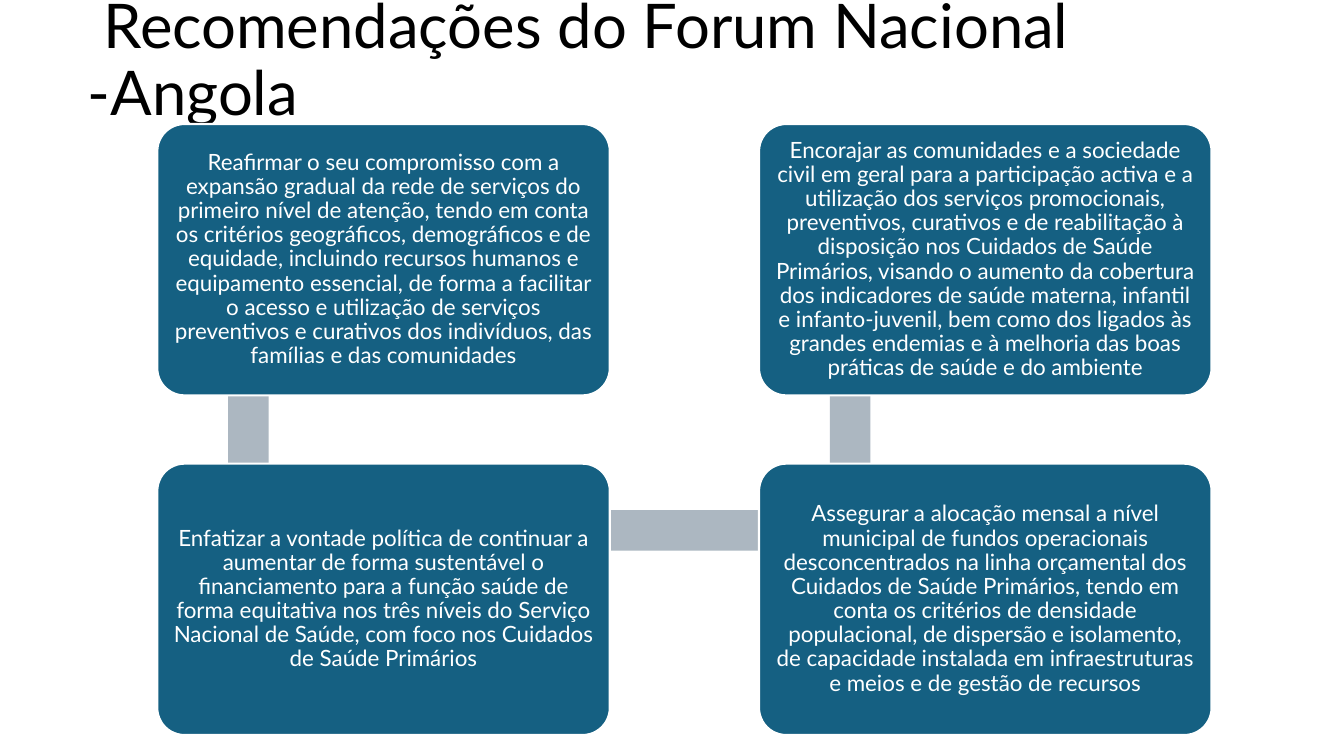
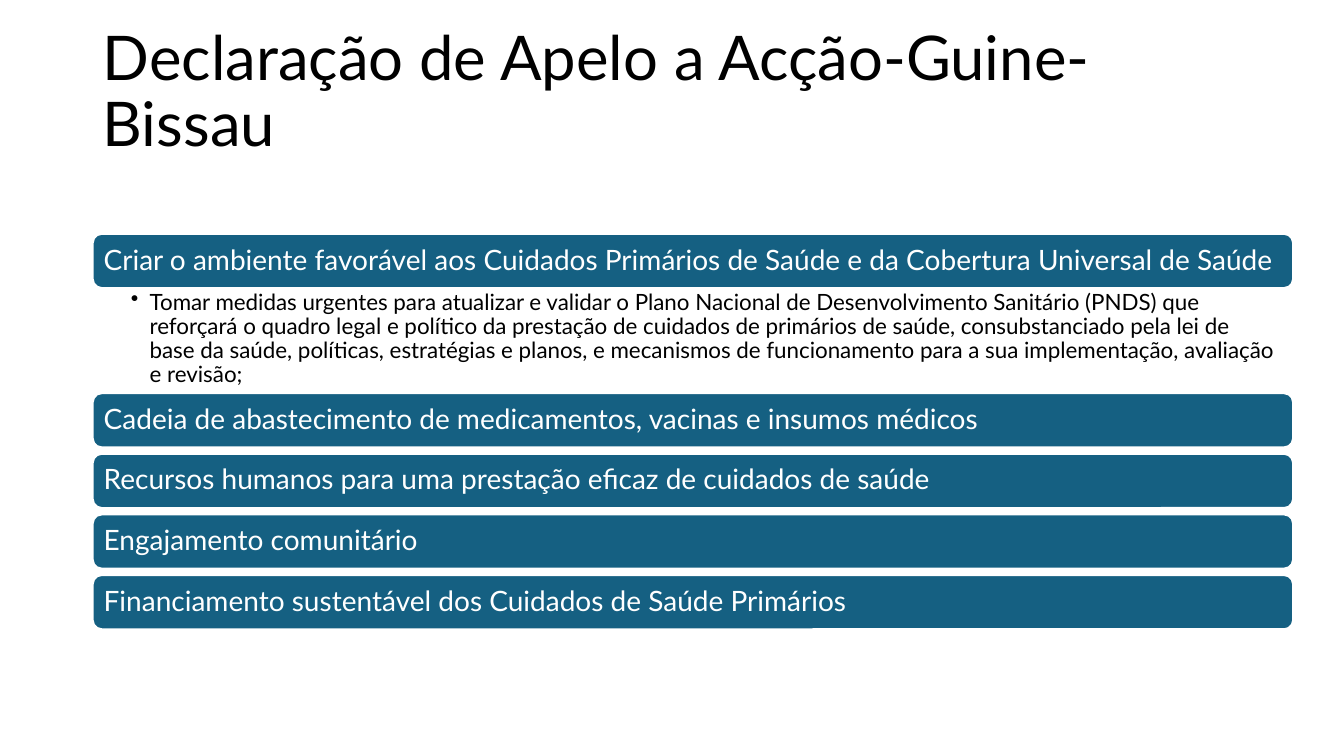
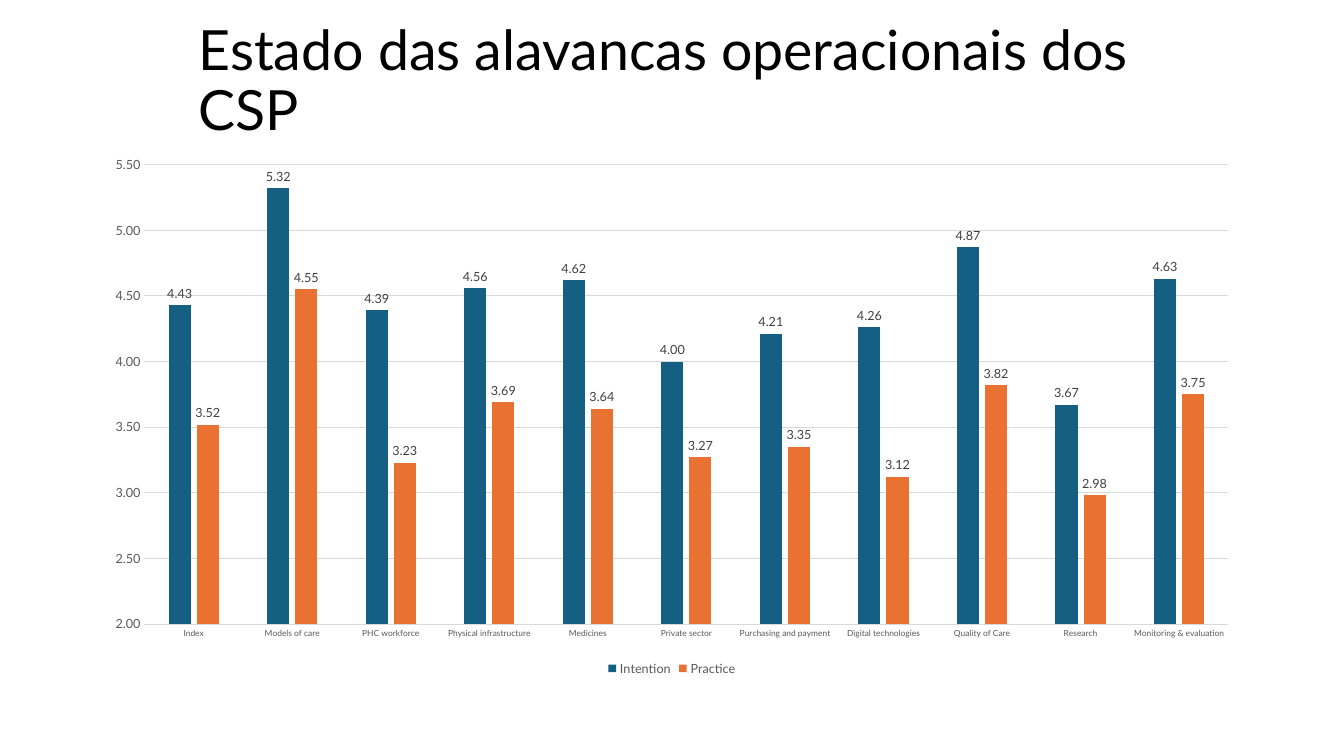
import pptx
import pptx.chart.data
import pptx.dml.color
import pptx.enum.chart
import pptx.enum.shapes
import pptx.enum.text
import pptx.oxml
import pptx.oxml.ns
import pptx.util

Pt = pptx.util.Pt
ALIGN = pptx.enum.text.PP_ALIGN
ANCHOR = pptx.enum.text.MSO_ANCHOR
SHAPE = pptx.enum.shapes.MSO_SHAPE

# Shared style
FONT = "Lato"
BLUE, ORANGE, LINK_GREY = "156082", "E97132", "ACB7C1"
BLACK, WHITE = "000000", "FFFFFF"
AXIS_GREY, LABEL_GREY, GRID_GREY = "595959", "404040", "D9D9D9"
TITLE_ONLY = 5

# Slide 1: rows of cards, left to right
RECOMMENDATIONS = [
    [
        "Reafirmar o seu compromisso com a expansão gradual da rede de serviços do "
        "primeiro nível de atenção, tendo em conta os critérios geográficos, demográficos "
        "e de equidade, incluindo recursos humanos e equipamento essencial, de forma a "
        "facilitar o acesso e utilização de serviços preventivos e curativos dos "
        "indivíduos, das famílias e das comunidades",
        "Encorajar as comunidades e a sociedade civil em geral para a participação activa "
        "e a utilização dos serviços promocionais, preventivos, curativos e de reabilitação "
        "à disposição nos Cuidados de Saúde Primários, visando o aumento da cobertura dos "
        "indicadores de saúde materna, infantil e infanto-juvenil, bem como dos ligados às "
        "grandes endemias e à melhoria das boas práticas de saúde e do ambiente",
    ],
    [
        "Enfatizar a vontade política de continuar a aumentar de forma sustentável o "
        "financiamento para a função saúde de forma equitativa nos três níveis do Serviço "
        "Nacional de Saúde, com foco nos Cuidados de Saúde Primários",
        "Assegurar a alocação mensal a nível municipal de fundos operacionais "
        "desconcentrados na linha orçamental dos Cuidados de Saúde Primários, tendo em "
        "conta os critérios de densidade populacional, de dispersão e isolamento, de "
        "capacidade instalada em infraestruturas e meios e de gestão de recursos",
    ],
]

# Slide 2: heading and optional detail
APPEALS = [
    (
        "Criar o ambiente favorável aos Cuidados Primários de Saúde e da Cobertura "
        "Universal de Saúde",
        "Tomar medidas urgentes para atualizar e validar o Plano Nacional de "
        "Desenvolvimento Sanitário (PNDS) que reforçará o quadro legal e político da "
        "prestação de cuidados de primários de saúde, consubstanciado pela lei de base da "
        "saúde, políticas, estratégias e planos, e mecanismos de funcionamento para a sua "
        "implementação, avaliação e revisão;",
    ),
    ("Cadeia de abastecimento de medicamentos, vacinas e insumos médicos", None),
    ("Recursos humanos para uma prestação eficaz de cuidados de saúde", None),
    ("Engajamento comunitário", None),
    ("Financiamento sustentável dos Cuidados de Saúde Primários", None),
]

# Slide 3: lever, intention, practice
LEVERS = [
    ("Index", 4.43, 3.52),
    ("Models of care", 5.32, 4.55),
    ("PHC workforce", 4.39, 3.23),
    ("Physical infrastructure", 4.56, 3.69),
    ("Medicines", 4.62, 3.64),
    ("Private sector", 4, 3.27),
    ("Purchasing and payment", 4.21, 3.35),
    ("Digital technologies", 4.26, 3.12),
    ("Quality of Care", 4.87, 3.82),
    ("Research", 3.67, 2.98),
    ("Monitoring & evaluation", 4.63, 3.75),
]


def rgb(code):
    return pptx.dml.color.RGBColor.from_string(code)


def style_font(font, size, color):
    font.name = FONT
    font.size = Pt(size)
    font.color.rgb = rgb(color)


def write_text(frame, text, size=16, color=BLACK, align=ALIGN.LEFT,
               anchor=ANCHOR.MIDDLE, insets=(7.2, 3.6, 7.2, 3.6), bullet_indent=0):
    """Fill a text frame with one paragraph; insets run left, top, right, bottom."""
    frame.word_wrap = True
    frame.auto_size = pptx.enum.text.MSO_AUTO_SIZE.NONE
    frame.vertical_anchor = anchor
    (frame.margin_left, frame.margin_top,
     frame.margin_right, frame.margin_bottom) = map(Pt, insets)
    paragraph = frame.paragraphs[0]
    paragraph.alignment = align
    paragraph.line_spacing = 0.9
    if bullet_indent:
        properties = paragraph._p.get_or_add_pPr()
        properties.set("marL", str(Pt(bullet_indent)))
        properties.set("indent", str(-Pt(bullet_indent)))
        properties.append(pptx.oxml.parse_xml(
            f'<a:buChar {pptx.oxml.ns.nsdecls("a")} char="•"/>'))
    run = paragraph.add_run()
    run.text = text
    style_font(run.font, size, color)


def add_titled_slide(deck, title, box, size=44):
    slide = deck.slides.add_slide(deck.slide_layouts[TITLE_ONLY])
    heading = slide.shapes.title
    heading.left, heading.top, heading.width, heading.height = map(Pt, box)
    write_text(heading.text_frame, title, size=size)
    return slide


def add_block(slide, kind, box, fill, outline=None):
    block = slide.shapes.add_shape(kind, *map(Pt, box))
    block.shadow.inherit = False
    block.fill.solid()
    block.fill.fore_color.rgb = rgb(fill)
    if outline:
        block.line.color.rgb = rgb(outline)
        block.line.width = Pt(1.5)
    else:
        block.line.fill.background()
    return block


def add_panel(slide, box, text, corner, **text_format):
    panel = add_block(slide, SHAPE.ROUNDED_RECTANGLE, box, BLUE, WHITE)
    panel.adjustments[0] = corner
    write_text(panel.text_frame, text, color=WHITE, **text_format)


def add_recommendations(slide):
    left, top, width, height = 112.4, 88.6, 323.2, 193.8
    column_step, row_step = 429.8, 242.6
    link = 29

    # Links lie behind the cards and show only in the gaps
    for column in range(2):
        add_block(slide, SHAPE.RECTANGLE,
                  (left + column * column_step + 50.5, top + 48, link, row_step), LINK_GREY)
    add_block(slide, SHAPE.RECTANGLE,
              (left + 65.5, top + row_step + 33.2, column_step, link), LINK_GREY)

    for row, cards in enumerate(RECOMMENDATIONS):
        for column, text in enumerate(cards):
            box = (left + column * column_step, top + row * row_step, width, height)
            add_panel(slide, box, text, 0.1, align=ALIGN.CENTER, insets=[4.8] * 4)


def add_appeals(slide):
    left, top, width = 66.2, 167, 857.5
    bar_height, detail_height, gap = 38.8, 75, 4.5
    for heading, detail in APPEALS:
        add_panel(slide, (left, top, width, bar_height), heading, 0.1667,
                  size=20, insets=[6] * 4)
        top += bar_height
        if detail:
            detail_box = slide.shapes.add_textbox(
                *map(Pt, (left, top, width, detail_height)))
            write_text(detail_box.text_frame, detail, anchor=ANCHOR.TOP,
                       insets=(27.2, 2, 11.4, 2), bullet_indent=13.5)
            top += detail_height
        else:
            top += gap


def add_levers_chart(slide):
    names, intention, practice = zip(*LEVERS)
    data = pptx.chart.data.CategoryChartData(number_format="0.00")
    data.categories = names
    data.add_series("Intention", intention)
    data.add_series("Practice", practice)
    chart = slide.shapes.add_chart(
        pptx.enum.chart.XL_CHART_TYPE.COLUMN_CLUSTERED,
        *map(Pt, (66, 104.4, 828, 381.6)), data).chart
    chart.has_title = False
    style_font(chart.font, 10, BLACK)

    # Columns and their labels
    plot = chart.plots[0]
    plot.vary_by_categories = False
    plot.gap_width, plot.overlap = 219, -27
    for series, color in zip(plot.series, (BLUE, ORANGE)):
        series.format.fill.solid()
        series.format.fill.fore_color.rgb = rgb(color)
        labels = series.data_labels
        labels.show_value = True
        labels.number_format, labels.number_format_is_linked = "0.00", False
        labels.position = pptx.enum.chart.XL_LABEL_POSITION.OUTSIDE_END
        style_font(labels.font, 9, LABEL_GREY)

    # Axes
    levers, scores = chart.category_axis, chart.value_axis
    for axis, size in ((levers, 6), (scores, 9)):
        axis.major_tick_mark = axis.minor_tick_mark = pptx.enum.chart.XL_TICK_MARK.NONE
        style_font(axis.tick_labels.font, size, AXIS_GREY)
    scores.minimum_scale, scores.maximum_scale, scores.major_unit = 2, 5.5, 0.5
    scores.tick_labels.number_format = "0.00"
    scores.tick_labels.number_format_is_linked = False
    scores.format.line.fill.background()
    for line in (levers.format.line, scores.major_gridlines.format.line):
        line.color.rgb = rgb(GRID_GREY)
        line.width = Pt(0.75)

    # Legend
    chart.has_legend = True
    chart.legend.position = pptx.enum.chart.XL_LEGEND_POSITION.BOTTOM
    chart.legend.include_in_layout = False
    style_font(chart.legend.font, 9, AXIS_GREY)


def main():
    deck = pptx.Presentation()
    deck.slide_width, deck.slide_height = Pt(960), Pt(540)

    add_recommendations(add_titled_slide(
        deck, " Recomendações do Forum Nacional -Angola", (55.4, 14.4, 867.6, 59.8)))
    add_appeals(add_titled_slide(
        deck, "Declaração de Apelo a Acção-Guine- Bissau", (66.2, 28.8, 828, 76.3)))
    add_levers_chart(add_titled_slide(
        deck, "Estado das alavancas operacionais dos CSP", (134.6, 31, 735, 55.4), size=39.6))

    deck.save("out.pptx")


if __name__ == "__main__":
    main()
